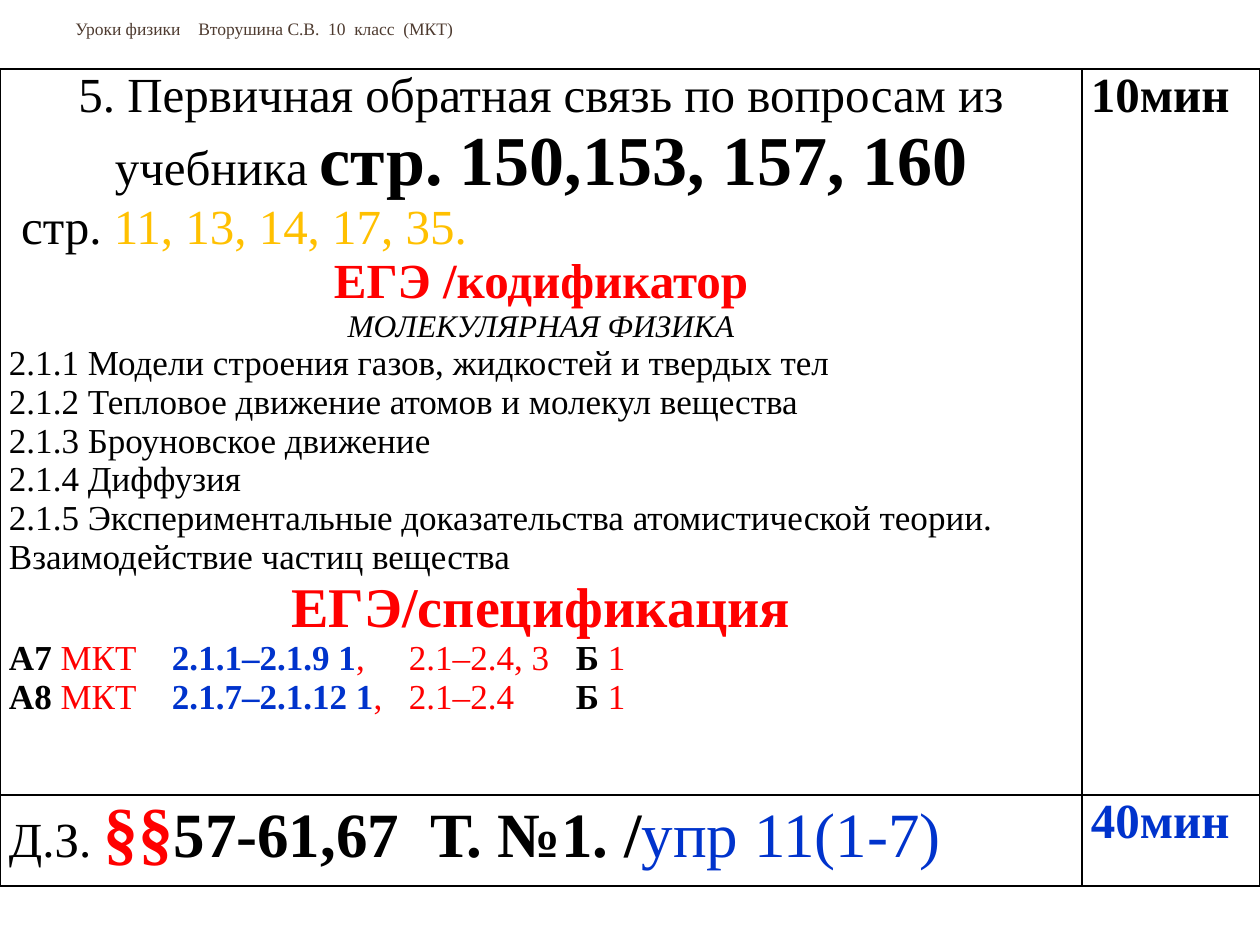
from lxml import etree
from pptx import Presentation
from pptx.dml.color import RGBColor
from pptx.enum.text import MSO_ANCHOR, PP_ALIGN
from pptx.oxml.ns import qn
from pptx.util import Emu, Pt

PX = 7257.14  # 126 px to the inch
FONT = "Times New Roman"
COLORS = {
    "black": "000000",
    "brown": "4E3B30",
    "gold": "FFC000",
    "red": "FF0000",
    "blue": "0033CC",
}
LEFT, CENTER = PP_ALIGN.LEFT, PP_ALIGN.CENTER
MIDDLE = MSO_ANCHOR.MIDDLE

COLUMN_WIDTHS = [1082, 178]
ROW_HEIGHTS = [726, 91]
HEADER_TABS = [123]
SPEC_TABS = [163, 400, 567]

TOPICS = [
    "2.1.1 Модели строения газов, жидкостей и твердых тел",
    "2.1.2 Тепловое движение атомов и молекул вещества",
    "2.1.3 Броуновское движение",
    "2.1.4 Диффузия",
    "2.1.5 Экспериментальные доказательства атомистической теории.",
    "Взаимодействие частиц вещества",
]
EXAM_TASKS = [
    ("А7", "2.1.1–2.1.9 1", "2.1–2.4, 3"),
    ("А8", "2.1.7–2.1.12 1", "2.1–2.4"),
]


def px(length):
    return Emu(round(length * PX))


def run(text, size, color="black", bold=False, italic=False):
    """Describe one run of text."""
    return text, size, color, bold, italic


def write(frame, paragraphs):
    """Fill a text frame from (alignment, tab stops, runs) triples."""
    for number, (alignment, tabs, runs) in enumerate(paragraphs):
        paragraph = frame.paragraphs[0] if number == 0 else frame.add_paragraph()
        paragraph.alignment = alignment
        if tabs:
            tab_list = etree.SubElement(
                paragraph._p.get_or_add_pPr(), qn("a:tabLst"))
            for stop in tabs:
                etree.SubElement(tab_list, qn("a:tab"),
                                 pos=str(px(stop)), algn="l")
        for text, size, color, bold, italic in runs:
            part = paragraph.add_run()
            part.text = text
            font = part.font
            font.name, font.size = FONT, Pt(size)
            font.bold, font.italic = bold, italic
            font.color.rgb = RGBColor.from_string(COLORS[color])


def add_borders(cell):
    properties = cell._tc.get_or_add_tcPr()
    for side in ("lnL", "lnR", "lnT", "lnB"):
        line = etree.SubElement(properties, qn(f"a:{side}"), w=str(Pt(1)))
        fill = etree.SubElement(line, qn("a:solidFill"))
        etree.SubElement(fill, qn("a:srgbClr"), val=COLORS["black"])


def add_header(slide):
    header = slide.shapes.add_textbox(px(63), 0, px(1197), px(57))
    header.text_frame.word_wrap = True
    header.text_frame.vertical_anchor = MIDDLE
    write(header.text_frame, [(LEFT, HEADER_TABS, [
        run("Уроки физики\tВторушина С.В.  10  класс  (МКТ)", 10, "brown")])])


def add_lesson_table(slide, contents):
    table = slide.shapes.add_table(
        len(ROW_HEIGHTS), len(COLUMN_WIDTHS), 0, px(69),
        px(sum(COLUMN_WIDTHS)), px(sum(ROW_HEIGHTS))).table
    table.first_row = table.horz_banding = False
    for column, width in zip(table.columns, COLUMN_WIDTHS):
        column.width = px(width)
    for row, height, row_contents in zip(table.rows, ROW_HEIGHTS, contents):
        row.height = px(height)
        for cell, paragraphs in zip(row.cells, row_contents):
            cell.margin_left = cell.margin_right = px(9)
            cell.margin_top = cell.margin_bottom = 0
            add_borders(cell)
            cell.fill.background()
            write(cell.text_frame, paragraphs)


def exam_task(code, topics, skills):
    return LEFT, SPEC_TABS, [
        run(code, 20, bold=True),
        run(" МКТ\t", 20, "red"),
        run(topics, 20, "blue", bold=True),
        run(f",\t{skills}\t", 20, "red"),
        run("Б", 20, bold=True),
        run(" 1", 20, "red"),
    ]


def lesson_stage():
    return [
        (CENTER, [], [
            run("5. Первичная обратная связь по вопросам из учебника ", 28),
            run("стр. 150,153, 157, 160", 40, bold=True)]),
        (LEFT, [], [run(" стр. ", 28),
                    run("11, 13, 14, 17, 35.", 28, "gold")]),
        (CENTER, [], [run("ЕГЭ /кодификатор", 28, "red", bold=True)]),
        (CENTER, [], [run("МОЛЕКУЛЯРНАЯ ФИЗИКА", 18, italic=True)]),
        *[(LEFT, [], [run(topic, 20)]) for topic in TOPICS],
        (CENTER, [], [run("ЕГЭ/спецификация", 32, "red", bold=True)]),
        *[exam_task(*task) for task in EXAM_TASKS],
    ]


def homework():
    return [(LEFT, [], [
        run("Д.З. ", 28),
        run("§§", 40, "red", bold=True),
        run("57-61,67  Т. №1. /", 36, bold=True),
        run("упр 11(1-7)", 36, "blue")])]


def duration(text, color):
    return [(LEFT, [], [run(text, 28, color, bold=True)])]


def main():
    presentation = Presentation()
    presentation.slide_width, presentation.slide_height = px(1260), px(945)
    slide = presentation.slides.add_slide(presentation.slide_layouts[6])
    add_header(slide)
    add_lesson_table(slide, [
        [lesson_stage(), duration("10мин", "black")],
        [homework(), duration("40мин", "blue")],
    ])
    presentation.save("out.pptx")


if __name__ == "__main__":
    main()
